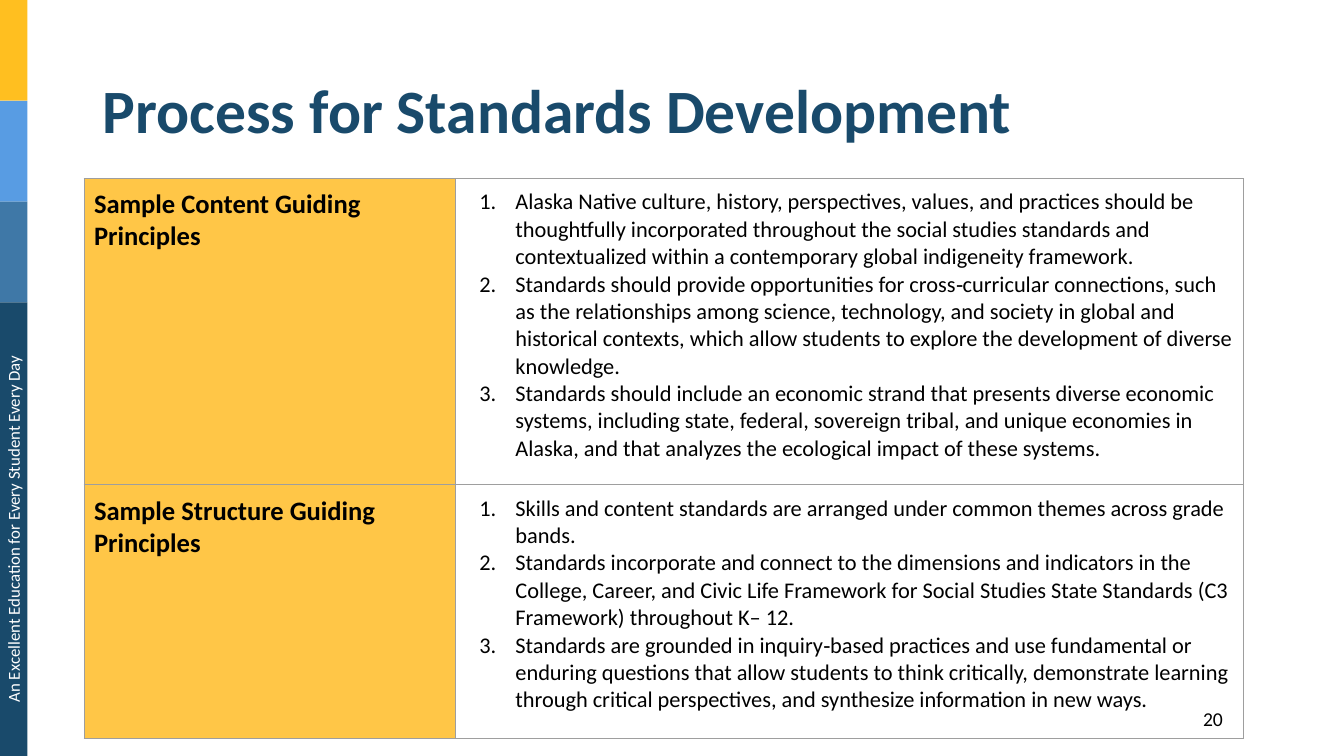
"""Builds the slide on guiding principles for standards development."""
from lxml.etree import SubElement
from pptx import Presentation
from pptx.dml.color import RGBColor
from pptx.enum.shapes import MSO_SHAPE as Shape
from pptx.enum.text import MSO_ANCHOR as Anchor, PP_ALIGN as Align
from pptx.oxml.ns import qn
from pptx.util import Cm, Pt

COLOURS = {
    "navy": "194A6B", "steel": "3F78A7", "sky": "589CE3", "gold": "FFBF20",
    "amber": "FFC647", "grey": "9E9E9E", "black": "000000", "white": "FFFFFF",
}
PRINCIPLES = [
    ("Sample Content Guiding Principles", 7.72, [
        "Alaska Native culture, history, perspectives, values, and practices should be "
        "thoughtfully incorporated throughout the social studies standards and "
        "contextualized within a contemporary global indigeneity framework.",
        "Standards should provide opportunities for cross‐curricular connections, such as "
        "the relationships among science, technology, and society in global and historical "
        "contexts, which allow students to explore the development of diverse knowledge.",
        "Standards should include an economic strand that presents diverse economic systems, "
        "including state, federal, sovereign tribal, and unique economies in Alaska, and that "
        "analyzes the ecological impact of these systems.",
    ]),
    ("Sample Structure Guiding Principles", 6.4, [
        "Skills and content standards are arranged under common themes across grade bands.",
        "Standards incorporate and connect to the dimensions and indicators in the College, "
        "Career, and Civic Life Framework for Social Studies State Standards (C3 Framework) "
        "throughout K– 12.",
        "Standards are grounded in inquiry‐based practices and use fundamental or enduring "
        "questions that allow students to think critically, demonstrate learning through "
        "critical perspectives, and synthesize information in new ways.",
    ]),
]


def add_span(para, text, size, colour="black", bold=False):
    span = para.add_run()
    span.text = text
    span.font.name = "Calibri"
    span.font.size = Pt(size)
    span.font.bold = bold
    span.font.color.rgb = RGBColor.from_string(COLOURS[colour])


def add_label(page, text, left, top, width, height, size, colour, align, bold=False):
    box = page.shapes.add_textbox(Cm(left), Cm(top), Cm(width), Cm(height))
    box.text_frame.word_wrap = True
    box.text_frame.vertical_anchor = Anchor.MIDDLE
    para = box.text_frame.paragraphs[0]
    para.alignment = align
    add_span(para, text, size, colour, bold)
    return box


deck = Presentation()
deck.slide_width, deck.slide_height = Cm(33.87), Cm(19.05)
page = deck.slides.add_slide(deck.slide_layouts[6])

band_top = 0
for colour, height in [("gold", 2.54), ("sky", 2.54), ("steel", 2.54), ("navy", 11.43)]:
    band = page.shapes.add_shape(Shape.RECTANGLE, 0, Cm(band_top), Cm(0.69), Cm(height))
    band.shadow.inherit = False
    band.fill.solid()
    band.fill.fore_color.rgb = RGBColor.from_string(COLOURS[colour])
    band.line.fill.background()
    band_top += height

motto = add_label(page, "An Excellent Education for Every Student Every Day",
                  -5.38, 12.95, 11.43, 0.76, 12, "white", Align.CENTER)
motto.rotation = 270
title = add_label(page, "Process for Standards Development",
                  2.34, 1.02, 29.21, 3.68, 44, "navy", Align.LEFT, bold=True)
title.text_frame.paragraphs[0].line_spacing = 0.9

widths = [9.35, 19.86]
frame = page.shapes.add_table(len(PRINCIPLES), 2, Cm(2.12), Cm(4.5), Cm(sum(widths)), Cm(14.12))
table = frame.table
table.first_row = table.horz_banding = False
for column, width in zip(table.columns, widths):
    column.width = Cm(width)

for row, (heading, height, items) in zip(table.rows, PRINCIPLES):
    row.height = Cm(height)
    for cell in row.cells:
        cell.margin_left = cell.margin_right = cell.margin_top = cell.margin_bottom = Cm(0.25)
        for side in ("a:lnL", "a:lnR", "a:lnT", "a:lnB"):
            border = SubElement(cell._tc.get_or_add_tcPr(), qn(side), w=str(Pt(0.75)))
            SubElement(SubElement(border, qn("a:solidFill")), qn("a:srgbClr"), val=COLOURS["grey"])

    name_cell, list_cell = row.cells
    name_cell.fill.solid()
    name_cell.fill.fore_color.rgb = RGBColor.from_string(COLOURS["amber"])
    add_span(name_cell.text_frame.paragraphs[0], heading, 19, bold=True)

    list_cell.fill.background()
    for index, item in enumerate(items):
        text_frame = list_cell.text_frame
        para = text_frame.add_paragraph() if index else text_frame.paragraphs[0]
        properties = para._p.get_or_add_pPr()
        properties.set("marL", str(Cm(1.27)))
        properties.set("indent", str(-Cm(0.91)))
        bullet_colour = SubElement(properties, qn("a:buClr"))
        SubElement(bullet_colour, qn("a:srgbClr"), val=COLOURS["black"])
        SubElement(properties, qn("a:buFont"), typeface="Calibri")
        SubElement(properties, qn("a:buAutoNum"), type="arabicPeriod")
        add_span(para, item, 16)

add_label(page, "20", 28.91, 17.68, 2.16, 0.86, 14, "black", Align.RIGHT)

deck.save("out.pptx")
